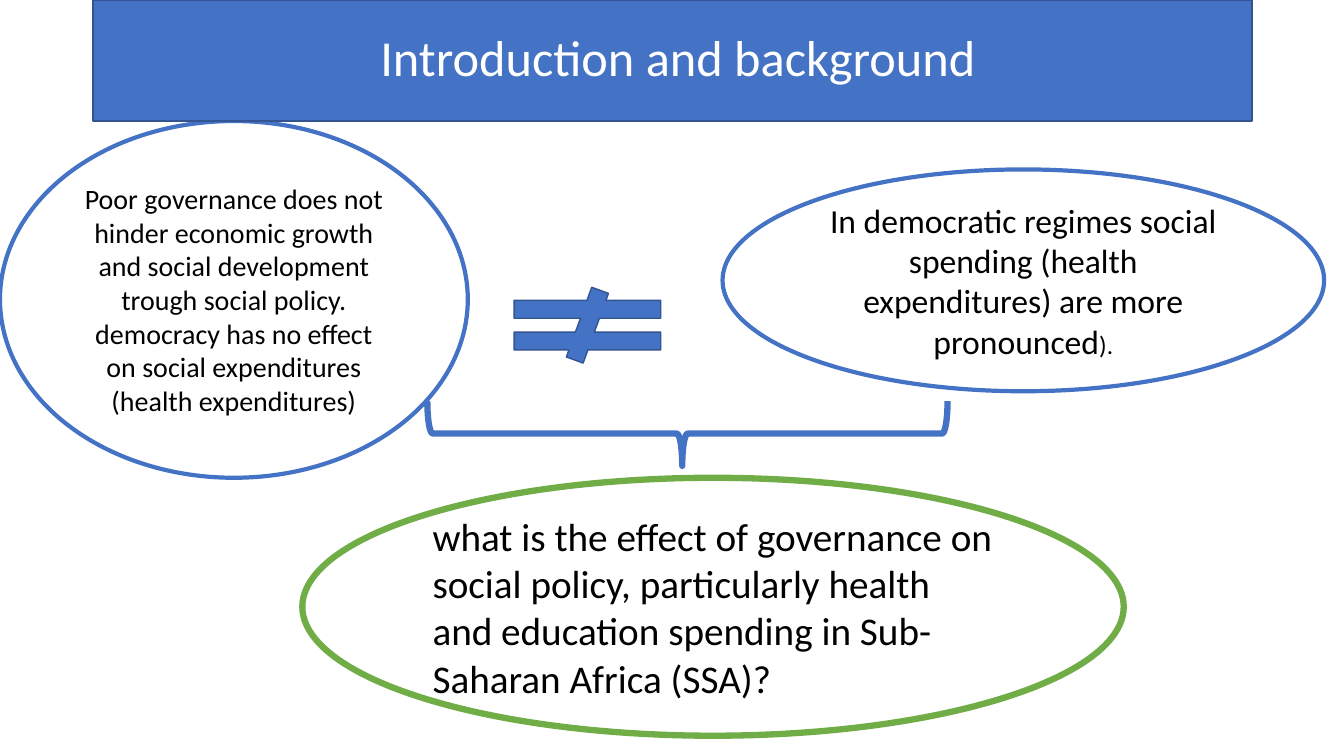
import pptx
import pptx.dml.color
import pptx.enum.shapes
import pptx.enum.text
import pptx.util

Cm = pptx.util.Cm
Pt = pptx.util.Pt
SHAPE = pptx.enum.shapes.MSO_SHAPE
ALIGN = pptx.enum.text.PP_ALIGN

BLUE = "4472C4"
DARK_BLUE = "325491"
GREEN = "70AD47"
WHITE = "FFFFFF"
BLACK = "000000"


def colour(value):
    return pptx.dml.color.RGBColor.from_string(value)


def apply(target, formats):
    for name, value in formats.items():
        setattr(target, name, value)


def add_figure(page, kind, place, fill, line, width, adjustments=(), rotation=0):
    figure = page.shapes.add_shape(kind, *map(Cm, place))
    figure.shadow.inherit = False
    figure.rotation = rotation
    for index, value in enumerate(adjustments):
        figure.adjustments[index] = value
    if fill:
        figure.fill.solid()
        figure.fill.fore_color.rgb = colour(fill)
    else:
        figure.fill.background()
    figure.line.color.rgb = colour(line)
    figure.line.width = Pt(width)
    return figure


def write(figure, paragraphs, ink=BLACK, **layout):
    frame = figure.text_frame
    apply(frame, {"word_wrap": True,
                  "vertical_anchor": pptx.enum.text.MSO_ANCHOR.MIDDLE})
    for index, spans in enumerate(paragraphs):
        para = frame.add_paragraph() if index else frame.paragraphs[0]
        apply(para, {"alignment": ALIGN.CENTER, **layout})
        for text, size in spans:
            span = para.add_run()
            span.text = text
            apply(span.font, {"name": "Calibri", "size": Pt(size)})
            span.font.color.rgb = colour(ink)


def add_statement(page, place, line, width, paragraphs, **layout):
    oval = add_figure(page, SHAPE.OVAL, place, WHITE, line, width)
    write(oval, paragraphs, **layout)


def add_title(page, text):
    box = add_figure(page, SHAPE.RECTANGLE, (2.34, 0, 29.21, 3.05),
                     BLUE, DARK_BLUE, 1)
    write(box, [[(text, 36)]], WHITE, line_spacing=0.9)


def main():
    deck = pptx.Presentation()
    apply(deck, {"slide_width": Cm(33.87), "slide_height": Cm(19.05)})
    page = deck.slides.add_slide(deck.slide_layouts[6])

    add_statement(page, (0, 3.05, 11.79, 8.99), BLUE, 3, [
        [("Poor governance does not hinder economic growth and social "
          "development trough social policy.", 20)],
        [("democracy has no effect on social expenditures "
          "(health expenditures)", 20)],
    ])
    add_statement(page, (18.21, 4.27, 15.16, 5.59), BLUE, 3, [
        [("In democratic regimes social spending (health expenditures) "
          "are more pronounced", 24), (").", 18)],
    ])
    add_figure(page, SHAPE.MATH_NOT_EQUAL, (12.29, 7.24, 5.03, 1.91),
               BLUE, DARK_BLUE, 1, (0.235, 66, 0.184))
    add_figure(page, SHAPE.LEFT_BRACE, (16.51, 4.37, 1.63, 13.11),
               None, BLUE, 4.5, (0.083, 0.49), 270)
    add_statement(page, (7.62, 12.04, 20.7, 6.5), GREEN, 4.5, [
        [("what is the effect of governance on social policy, particularly "
          "health and education spending in Sub-Saharan Africa (SSA)?", 28)],
    ], alignment=ALIGN.LEFT)
    add_title(page, " Introduction and background")

    deck.save("out.pptx")


if __name__ == "__main__":
    main()
